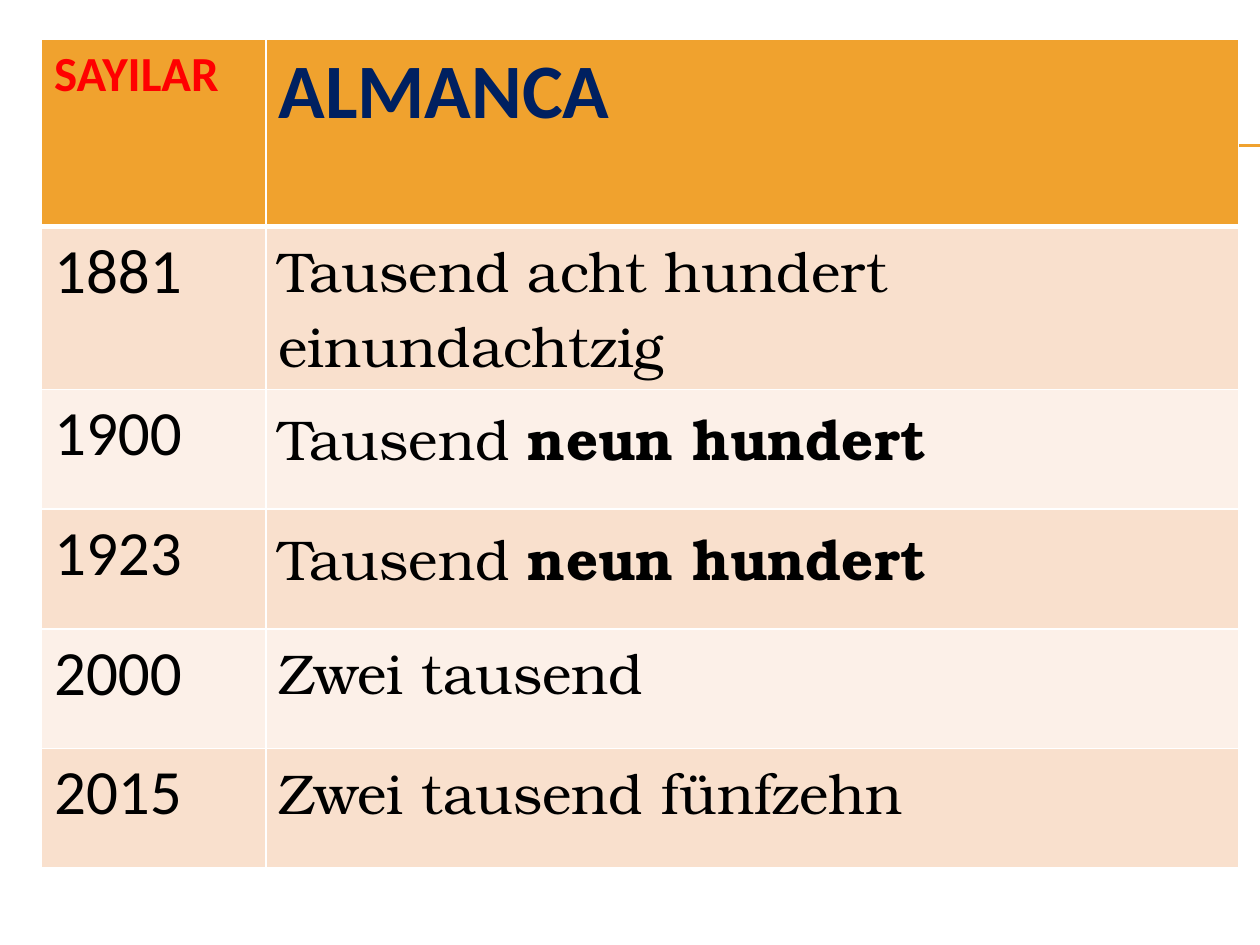
from lxml import etree
from pptx import Presentation
from pptx.dml.color import RGBColor
from pptx.enum.shapes import MSO_CONNECTOR
from pptx.oxml.ns import qn
from pptx.util import Inches, Pt

STRAIGHT = MSO_CONNECTOR.STRAIGHT
COLORS = {
    "orange": "F0A22E", "dark band": "F9E0CD", "light band": "FCF0E8",
    "white": "FFFFFF", "red": "FF0000", "navy": "002060", "black": "000000",
}
SANS, SERIF = "Calibri", "TeX Gyre Bonum"

HEADINGS = [("SAYILAR", 28, "red"), ("ALMANCA", 44, "navy")]
# Each number with its German words as (text, bold) runs
NUMBERS = [
    ("1881", [("Tausend acht hundert einundachtzig", False)]),
    ("1900", [("Tausend ", False), ("neun hundert", True)]),
    ("1923", [("Tausend ", False), ("neun hundert", True)]),
    ("2000", [("Zwei tausend", False)]),
    ("2015", [("Zwei tausend fünfzehn", False)]),
]
COLUMN_WIDTHS = [1.78, 7.72]
HEADER_HEIGHT, ROW_HEIGHT = 1.49, 0.95
RULE_HEIGHTS = [1.15, 1.16]


def rgb(name):
    return RGBColor.from_string(COLORS[name])


def add_rule(page, top):
    rule = page.shapes.add_connector(
        STRAIGHT, Inches(0.56), Inches(top), Inches(10), Inches(top))
    rule.line.color.rgb = rgb("orange")
    rule.line.width = Pt(0.75)
    etree.SubElement(rule._element.spPr, qn("a:effectLst"))


def style_cell(cell, fill, bottom=1):
    """Fill the cell and draw white borders, the bottom one in its own width."""
    properties = cell._tc.get_or_add_tcPr()
    for side, width in (("L", 1), ("R", 1), ("T", 1), ("B", bottom)):
        border = etree.SubElement(properties, qn(f"a:ln{side}"), w=str(Pt(width)))
        solid = etree.SubElement(border, qn("a:solidFill"))
        etree.SubElement(solid, qn("a:srgbClr"), val=COLORS["white"])
    cell.fill.solid()
    cell.fill.fore_color.rgb = rgb(fill)


def add_run(cell, text, size, font, color="black", bold=False):
    span = cell.text_frame.paragraphs[0].add_run()
    span.text = text
    span.font.size = Pt(size)
    span.font.name = font
    span.font.bold = bold
    span.font.color.rgb = rgb(color)


def add_number_table(page):
    row_count = len(NUMBERS) + 1
    height = HEADER_HEIGHT + ROW_HEIGHT * len(NUMBERS)
    table = page.shapes.add_table(
        row_count, len(COLUMN_WIDTHS), Inches(0.33), Inches(0.31),
        Inches(sum(COLUMN_WIDTHS)), Inches(height)).table
    for column, width in zip(table.columns, COLUMN_WIDTHS):
        column.width = Inches(width)
    for index, row in enumerate(table.rows):
        row.height = Inches(ROW_HEIGHT if index else HEADER_HEIGHT)

    for column, (text, size, color) in enumerate(HEADINGS):
        cell = table.cell(0, column)
        style_cell(cell, "orange", bottom=3)
        add_run(cell, text, size, SANS, color, bold=True)

    for index, (number, words) in enumerate(NUMBERS, start=1):
        number_cell, word_cell = table.cell(index, 0), table.cell(index, 1)
        for cell in (number_cell, word_cell):
            style_cell(cell, "dark band" if index % 2 else "light band",)
        add_run(number_cell, number, 36, SANS)
        for text, bold in words:
            add_run(word_cell, text, 32, SERIF, bold=bold)


def main():
    deck = Presentation()
    deck.slide_width, deck.slide_height = Inches(10), Inches(7.5)
    page = deck.slides.add_slide(deck.slide_layouts[6])
    for top in RULE_HEIGHTS:
        add_rule(page, top)
    add_number_table(page)
    deck.save("out.pptx")


if __name__ == "__main__":
    main()
